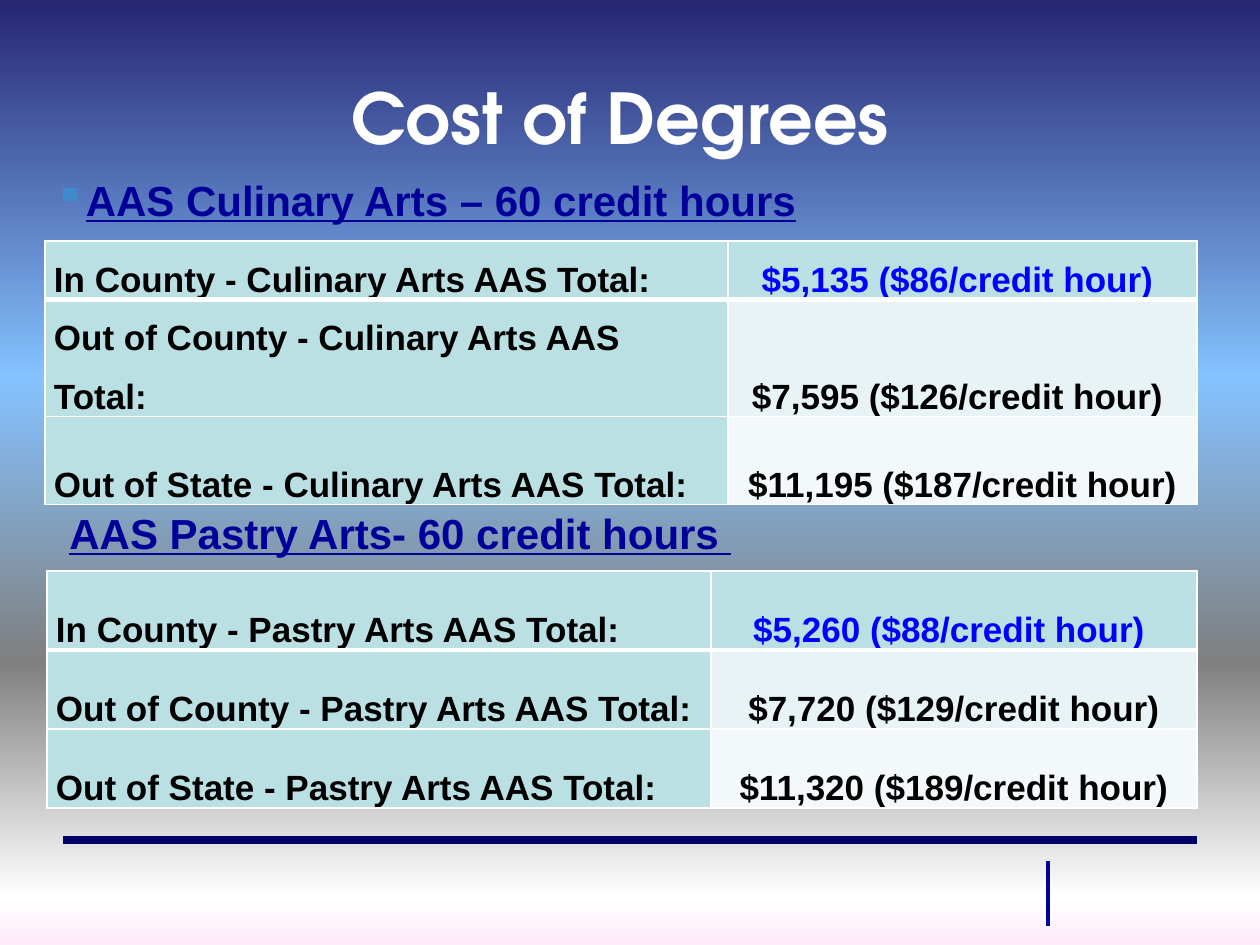
from dataclasses import dataclass

from lxml import etree
from pptx import Presentation
from pptx import util as u
from pptx.dml.color import RGBColor
from pptx.enum import shapes, text
from pptx.oxml.ns import qn

EMU_PER_PX = 914400 / 126


@dataclass(frozen=True)
class Theme:
    title_font: str = "TeX Gyre Adventor"
    body_font: str = "Arial"
    title_size: int = 40
    heading_size: int = 24
    cell_size: int = 20
    white: str = "FFFFFF"
    black: str = "000000"
    navy: str = "000099"
    rule: str = "000066"
    bullet: str = "3F8ACA"
    highlight: str = "0000FF"
    label_fill: str = "BBE0E3"
    cost_fills: tuple[str, ...] = ("BBE0E3", "E7F3F4", "F3F9FA")
    sky: tuple[tuple[int, str], ...] = (
        (0, "262673"), (40, "85C2FF"), (70, "808080"), (95, "FFFFFF"), (100, "FFEBFA"))


@dataclass(frozen=True)
class Box:
    left: int
    top: int
    width: int
    height: int


@dataclass(frozen=True)
class Heading:
    wording: str
    box: Box
    font: str
    size: int
    color: str
    underline: bool = True
    align: text.PP_ALIGN = text.PP_ALIGN.LEFT
    anchor: text.MSO_ANCHOR = text.MSO_ANCHOR.TOP
    spacing: float = 1.0
    bullet: str = ""


@dataclass(frozen=True)
class Rule:
    start: tuple[int, int]
    end: tuple[int, int]
    color: str
    weight: float


@dataclass(frozen=True)
class CostTable:
    left: int
    top: int
    columns: tuple[int, int]
    rows: tuple[int, ...]
    costs: tuple[tuple[str, str], ...]


THEME = Theme()

HEADINGS = (
    Heading("Cost of Degrees ", Box(63, 38, 1134, 157), THEME.title_font, THEME.title_size,
            THEME.white, underline=False, align=text.PP_ALIGN.CENTER,
            anchor=text.MSO_ANCHOR.MIDDLE),
    Heading("AAS Culinary Arts – 60 credit hours", Box(42, 178, 774, 53), THEME.body_font,
            THEME.heading_size, THEME.navy, spacing=0.8, bullet="▪"),
    Heading("AAS Pastry Arts- 60 credit hours ", Box(57, 501, 1114, 63), THEME.body_font,
            THEME.heading_size, THEME.navy),
)

RULES = (
    Rule((63, 840), (1197, 840), THEME.rule, 4.5),
    Rule((1048, 861), (1048, 926), THEME.navy, 2.25),
)

TABLES = (
    CostTable(45, 241, (683, 469), (49, 81, 88), (
        ("In County - Culinary Arts AAS Total:", "$5,135 ($86/credit hour) "),
        ("Out of County - Culinary Arts AAS Total:", "$7,595 ($126/credit hour) "),
        ("Out of State - Culinary Arts AAS Total:", "$11,195 ($187/credit hour)"))),
    CostTable(47, 571, (664, 486), (79, 79, 79), (
        ("In County - Pastry Arts AAS Total:", "$5,260 ($88/credit hour) "),
        ("Out of County - Pastry Arts AAS Total:", " $7,720 ($129/credit hour) "),
        ("Out of State - Pastry Arts AAS Total:", " $11,320 ($189/credit hour) "))),
)


def px(length: int) -> u.Emu:
    return u.Emu(round(length * EMU_PER_PX))


def rgb(color: str) -> RGBColor:
    return RGBColor.from_string(color)


def set_font(paragraph, name: str, size: int, color: str, underline: bool = False) -> None:
    font = paragraph.font
    font.name, font.size, font.bold = name, u.Pt(size), True
    font.color.rgb = rgb(color)
    if underline:
        font.underline = True


def add_color(parent, color: str) -> None:
    etree.SubElement(parent, qn("a:srgbClr"), val=color)


def paint_sky(slide) -> None:
    fill = slide.background.fill
    fill.gradient()
    fill.gradient_angle = 270
    stops = next(slide.element.iter(qn("a:gsLst")))
    for stop in list(stops):
        stops.remove(stop)
    for percent, color in THEME.sky:
        add_color(etree.SubElement(stops, qn("a:gs"), pos=str(percent * 1000)), color)


def add_bullet(paragraph, mark: str) -> None:
    properties = paragraph._p.get_or_add_pPr()
    properties.set("marL", str(px(30)))
    properties.set("indent", str(-px(30)))
    add_color(etree.SubElement(properties, qn("a:buClr")), THEME.bullet)
    etree.SubElement(properties, qn("a:buChar"), char=mark)


def draw_heading(slide, heading: Heading) -> None:
    box = heading.box
    frame = slide.shapes.add_textbox(
        px(box.left), px(box.top), px(box.width), px(box.height)).text_frame
    frame.word_wrap = True
    frame.vertical_anchor = heading.anchor
    line = frame.paragraphs[0]
    line.text = heading.wording
    line.alignment = heading.align
    line.line_spacing = heading.spacing
    if heading.bullet:
        add_bullet(line, heading.bullet)
    set_font(line, heading.font, heading.size, heading.color, heading.underline)


def draw_rule(slide, rule: Rule) -> None:
    connector = slide.shapes.add_connector(
        shapes.MSO_CONNECTOR.STRAIGHT, *map(px, rule.start + rule.end))
    connector.line.color.rgb = rgb(rule.color)
    connector.line.width = u.Pt(rule.weight)
    etree.SubElement(connector._element.spPr, qn("a:effectLst"))


def set_borders(cell, top: int, bottom: int) -> None:
    properties = cell._tc.get_or_add_tcPr()
    sides = (("lnL", 1), ("lnR", 1), ("lnT", top), ("lnB", bottom))
    for position, (side, weight) in enumerate(sides):
        border = etree.Element(qn(f"a:{side}"), w=str(u.Pt(weight)))
        add_color(etree.SubElement(border, qn("a:solidFill")), THEME.white)
        properties.insert(position, border)


def fill_cell(cell, wording: str, row: int, column: int) -> None:
    is_cost = column == 1
    cell.margin_left = cell.margin_right = px(9)
    cell.margin_top = cell.margin_bottom = 0
    cell.vertical_anchor = text.MSO_ANCHOR.BOTTOM
    cell.fill.solid()
    cell.fill.fore_color.rgb = rgb(THEME.cost_fills[row] if is_cost else THEME.label_fill)
    set_borders(cell, top=3 if row == 1 else 1, bottom=3 if row == 0 else 1)
    line = cell.text_frame.paragraphs[0]
    line.text = wording
    line.line_spacing = 1.5
    line.alignment = text.PP_ALIGN.CENTER if is_cost else text.PP_ALIGN.LEFT
    color = THEME.highlight if is_cost and row == 0 else THEME.black
    set_font(line, THEME.body_font, THEME.cell_size, color)


def draw_table(slide, spec_table: CostTable) -> None:
    grid = slide.shapes.add_table(
        len(spec_table.rows), len(spec_table.columns), px(spec_table.left), px(spec_table.top),
        px(sum(spec_table.columns)), px(sum(spec_table.rows))).table
    for column, width in zip(grid.columns, spec_table.columns):
        column.width = px(width)
    for row, height in zip(grid.rows, spec_table.rows):
        row.height = px(height)
    for r, entry in enumerate(spec_table.costs):
        for c, wording in enumerate(entry):
            fill_cell(grid.cell(r, c), wording, r, c)


def main() -> None:
    deck = Presentation()
    deck.slide_width, deck.slide_height = px(1260), px(945)
    slide = deck.slides.add_slide(deck.slide_layouts[6])
    paint_sky(slide)
    for rule in RULES:
        draw_rule(slide, rule)
    for cost_table in TABLES:
        draw_table(slide, cost_table)
    for heading in HEADINGS:
        draw_heading(slide, heading)
    deck.save("out.pptx")


if __name__ == "__main__":
    main()
